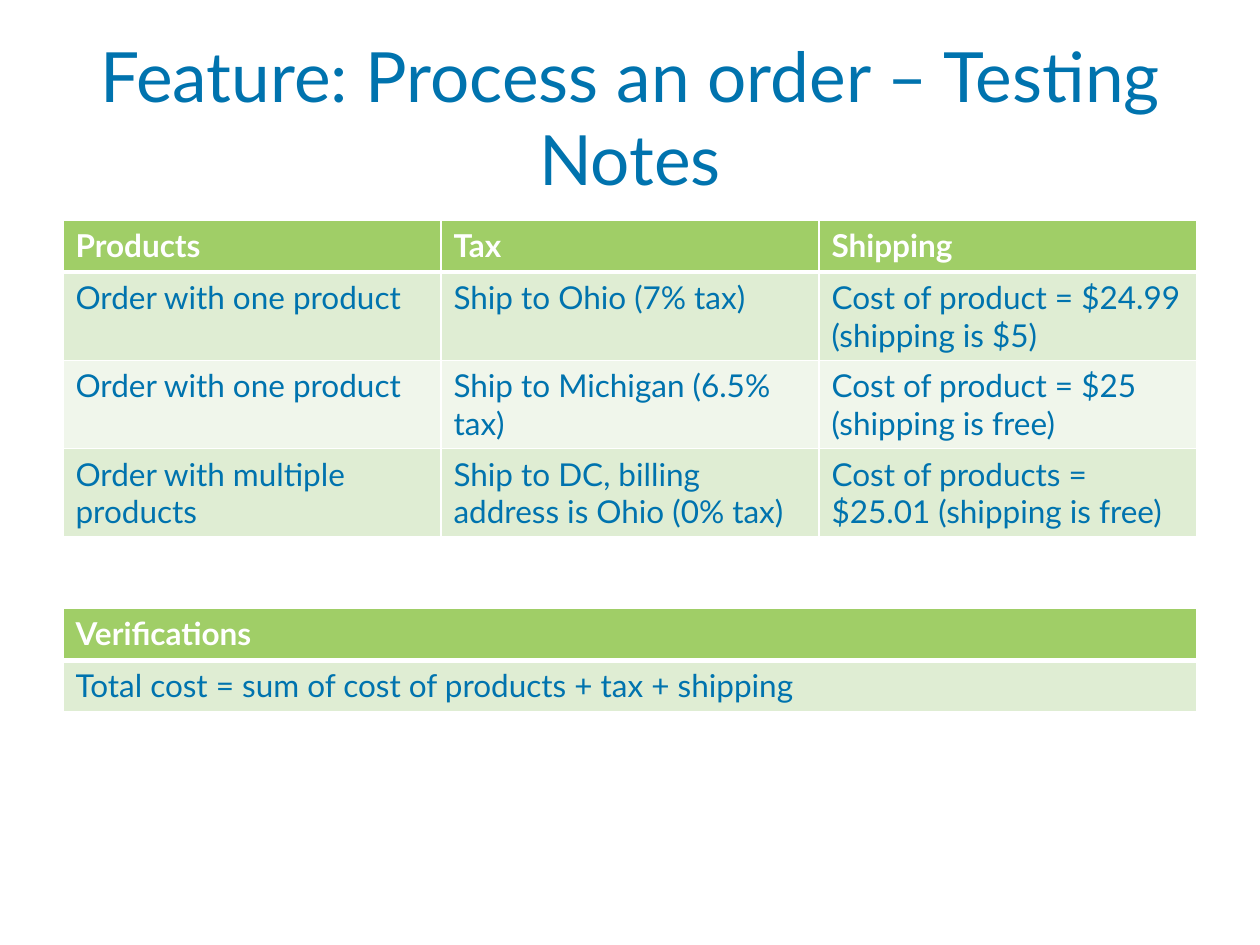
"""Build the testing notes slide: a title, a table of cases and a table of checks."""
from lxml import etree
from pptx import Presentation, util as u
from pptx.dml.color import RGBColor
from pptx.enum import text
from pptx.oxml.ns import qn

BLUE = RGBColor(0x00, 0x73, 0xAE)
GREEN = RGBColor(0xA0, 0xCE, 0x67)
BANDS = RGBColor(0xDF, 0xED, 0xD3), RGBColor(0xF0, 0xF6, 0xEB)
WHITE = RGBColor(0xFF, 0xFF, 0xFF)

HEADING = "Feature: Process an order – Testing Notes"
CASES = [
    ("Products", "Tax", "Shipping"),
    ("Order with one product", "Ship to Ohio (7% tax)",
     "Cost of product = $24.99 (shipping is $5)"),
    ("Order with one product", "Ship to Michigan (6.5% tax)",
     "Cost of product = $25 (shipping is free)"),
    ("Order with multiple products", "Ship to DC, billing address is Ohio (0% tax)",
     "Cost of products = $25.01 (shipping is free)"),
]
CHECKS = [("Verifications",), ("Total cost = sum of cost of products + tax + shipping",)]

WIDTH, HEIGHT = 10, 7.5
MARGIN = WIDTH / 20
CONTENT = WIDTH - 2 * MARGIN
ONE_LINE, TWO_LINES = 0.41, 0.7
TITLE_FONT = {"name": "Lato", "size": u.Pt(39.6)}
HEADER_FONT = {"name": "Lato", "size": u.Pt(18), "bold": True}
BODY_FONT = {"name": "Lato", "size": u.Pt(18), "bold": False}


def write(frame, words, font_format, color):
    paragraph = frame.paragraphs[0]
    run = paragraph.add_run()
    run.text = words
    for key, value in font_format.items():
        setattr(run.font, key, value)
    run.font.color.rgb = color
    return paragraph


def add_borders(cell, top, bottom):
    properties = cell._tc.get_or_add_tcPr()
    for side, points in {"L": 1, "R": 1, "T": top, "B": bottom}.items():
        line = etree.SubElement(properties, qn(f"a:ln{side}"), w=str(u.Pt(points)))
        solid = etree.SubElement(line, qn("a:solidFill"))
        etree.SubElement(solid, qn("a:srgbClr"), val=str(WHITE))


def add_grid(slide, rows, top, body_height):
    heights = [ONE_LINE] + [body_height] * (len(rows) - 1)
    grid = slide.shapes.add_table(
        len(rows), len(rows[0]), u.Inches(MARGIN), u.Inches(top),
        u.Inches(CONTENT), u.Inches(sum(heights))).table
    for r, (entries, height) in enumerate(zip(rows, heights)):
        grid.rows[r].height = u.Inches(height)
        header = r == 0
        for c, words in enumerate(entries):
            cell = grid.cell(r, c)
            add_borders(cell, top=3 if r == 1 else 1, bottom=3 if header else 1)
            cell.fill.solid()
            cell.fill.fore_color.rgb = GREEN if header else BANDS[(r - 1) % 2]
            write(cell.text_frame, words, HEADER_FONT if header else BODY_FONT,
                  WHITE if header else BLUE)


def main():
    deck = Presentation()
    deck.slide_width, deck.slide_height = u.Inches(WIDTH), u.Inches(HEIGHT)
    slide = deck.slides.add_slide(deck.slide_layouts[6])
    heading = slide.shapes.add_textbox(
        u.Inches(MARGIN), u.Inches(HEIGHT * 0.04),
        u.Inches(CONTENT), u.Inches(HEIGHT / 6)).text_frame
    heading.word_wrap = True
    heading.vertical_anchor = text.MSO_ANCHOR.MIDDLE
    write(heading, HEADING, TITLE_FONT, BLUE).alignment = text.PP_ALIGN.CENTER
    add_grid(slide, CASES, 1.75, TWO_LINES)
    add_grid(slide, CHECKS, 4.83, ONE_LINE)
    deck.save("out.pptx")


if __name__ == "__main__":
    main()
